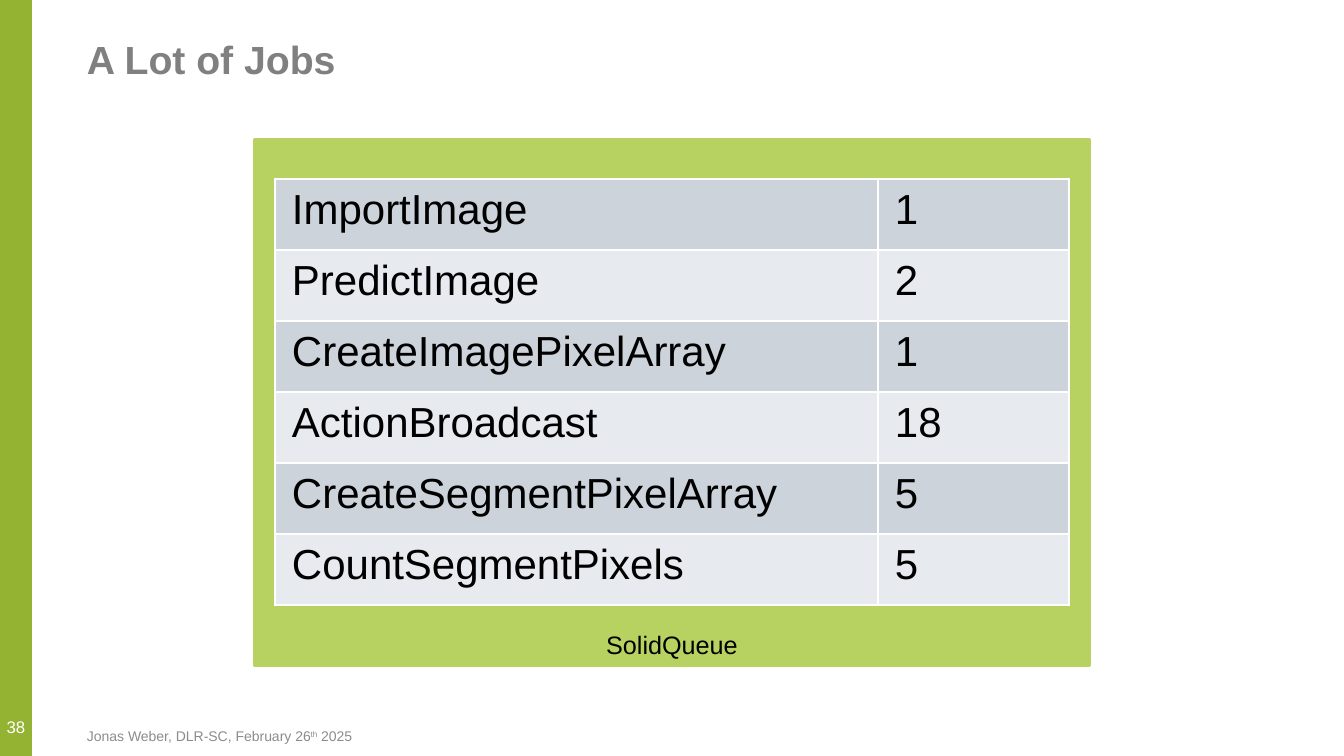
import pptx
import pptx.util
import pptx.dml.color
import pptx.enum.shapes
import pptx.enum.text
import pptx.oxml.ns
from dataclasses import dataclass
from lxml import etree

# Content
TITLE = "A Lot of Jobs"
PAGE_NUMBER = "38"
FOOTER = [("Jonas Weber, DLR-SC, February 26", 0), ("th", 30), (" 2025", 0)]
QUEUE_NAME = "SolidQueue"
JOBS = [
    ("ImportImage", 1),
    ("PredictImage", 2),
    ("CreateImagePixelArray", 1),
    ("ActionBroadcast", 18),
    ("CreateSegmentPixelArray", 5),
    ("CountSegmentPixels", 5),
]

# Layout in px: left, top, width, height
PAGE_SIZE = (1344, 756)
SIDEBAR = (0, 0, 32, 756)
TITLE_BOX = (77, 36, 1109, 109)
NUMBER_BOX = (0, 589, 32, 158)
FOOTER_BOX = (77, 722, 454, 28)
QUEUE_BOX = (255, 140, 834, 525)
TABLE_LEFT, TABLE_TOP = 275, 179
COLUMN_WIDTHS = (603, 191)
ROW_HEIGHT = 71
DEFAULT_INSETS = (10, 5, 10, 5)
CELL_INSETS = (17, 8, 17, 8)


@dataclass(frozen=True)
class Theme:
    font: str = "Arial"
    sidebar: str = "94B333"
    queue: str = "B7D260"
    title: str = "808080"
    footer: str = "8C8C8C"
    text: str = "000000"
    white: str = "FFFFFF"
    bands: tuple = ("CCD3DA", "E7EAEE")
    title_size: int = 28
    cell_size: int = 30
    queue_size: int = 18
    number_size: int = 12
    footer_size: int = 10


THEME = Theme()
ALIGN = pptx.enum.text.PP_ALIGN
ANCHOR = pptx.enum.text.MSO_ANCHOR


def px(length):
    return pptx.util.Emu(round(length * 914400 / 100.8))


def rgb(color):
    return pptx.dml.color.RGBColor.from_string(color)


def write(frame, text, *, size, color, bold=False, align=ALIGN.LEFT,
          anchor=ANCHOR.TOP, insets=DEFAULT_INSETS, wrap=True, line_spacing=None):
    """Write a string, or (string, baseline percent) pairs, as one paragraph."""
    frame.word_wrap = wrap
    frame.vertical_anchor = anchor
    (frame.margin_left, frame.margin_top,
     frame.margin_right, frame.margin_bottom) = map(px, insets)
    para = frame.paragraphs[0]
    para.alignment = align
    para.line_spacing = line_spacing
    for part, baseline in [(text, 0)] if isinstance(text, str) else text:
        span = para.add_run()
        span.text = part
        span.font.name = THEME.font
        span.font.size = pptx.util.Pt(size)
        span.font.bold = bold
        span.font.color.rgb = rgb(color)
        if baseline:
            span.font._element.set("baseline", str(baseline * 1000))


def add_block(page, kind, place, color, line_width=0):
    block = page.shapes.add_shape(kind, *map(px, place))
    block.shadow.inherit = False
    block.fill.solid()
    block.fill.fore_color.rgb = rgb(color)
    if line_width:
        block.line.color.rgb = rgb(color)
        block.line.width = pptx.util.Pt(line_width)
    else:
        block.line.fill.background()
    return block


def add_text(page, place, text, **style):
    box = page.shapes.add_textbox(*map(px, place))
    write(box.text_frame, text, **style)


def set_borders(cell, color, width):
    properties = cell._tc.get_or_add_tcPr()
    qn = pptx.oxml.ns.qn
    for position, side in enumerate(("a:lnL", "a:lnR", "a:lnT", "a:lnB")):
        line = etree.Element(qn(side), w=str(pptx.util.Pt(width)))
        fill = etree.SubElement(line, qn("a:solidFill"))
        etree.SubElement(fill, qn("a:srgbClr"), val=color)
        properties.insert(position, line)


def add_job_table(page):
    size = (sum(COLUMN_WIDTHS), ROW_HEIGHT * len(JOBS))
    frame = page.shapes.add_table(len(JOBS), len(COLUMN_WIDTHS),
                                  *map(px, (TABLE_LEFT, TABLE_TOP, *size)))
    table = frame.table
    table.first_row = False
    table.horz_banding = False
    for column, width in zip(table.columns, COLUMN_WIDTHS):
        column.width = px(width)
    for index, (row, job) in enumerate(zip(table.rows, JOBS)):
        row.height = px(ROW_HEIGHT)
        for cell, value in zip(row.cells, job):
            cell.fill.solid()
            cell.fill.fore_color.rgb = rgb(THEME.bands[index % 2])
            set_borders(cell, THEME.white, 1)
            write(cell.text_frame, str(value), size=THEME.cell_size, color=THEME.text)
            (cell.margin_left, cell.margin_top,
             cell.margin_right, cell.margin_bottom) = map(px, CELL_INSETS)


def main():
    deck = pptx.Presentation()
    deck.slide_width, deck.slide_height = map(px, PAGE_SIZE)
    page = deck.slides.add_slide(deck.slide_layouts.get_by_name("Title Only"))
    shapes = pptx.enum.shapes.MSO_SHAPE

    # Sidebar, title, page number and footer
    add_block(page, shapes.RECTANGLE, SIDEBAR, THEME.sidebar)
    title = page.shapes.title
    title.left, title.top, title.width, title.height = map(px, TITLE_BOX)
    write(title.text_frame, TITLE, size=THEME.title_size, color=THEME.title,
          bold=True, line_spacing=0.9)
    add_text(page, NUMBER_BOX, PAGE_NUMBER, size=THEME.number_size, color=THEME.white,
             align=ALIGN.CENTER, anchor=ANCHOR.BOTTOM, insets=(4, 10, 4, 10), wrap=False)
    add_text(page, FOOTER_BOX, FOOTER, size=THEME.footer_size, color=THEME.footer,
             anchor=ANCHOR.MIDDLE)

    # Queue with its jobs
    queue = add_block(page, shapes.FLOWCHART_PROCESS, QUEUE_BOX, THEME.queue, line_width=3)
    write(queue.text_frame, QUEUE_NAME, size=THEME.queue_size, color=THEME.text,
          align=ALIGN.CENTER, anchor=ANCHOR.BOTTOM)
    add_job_table(page)

    deck.save("out.pptx")


if __name__ == "__main__":
    main()
